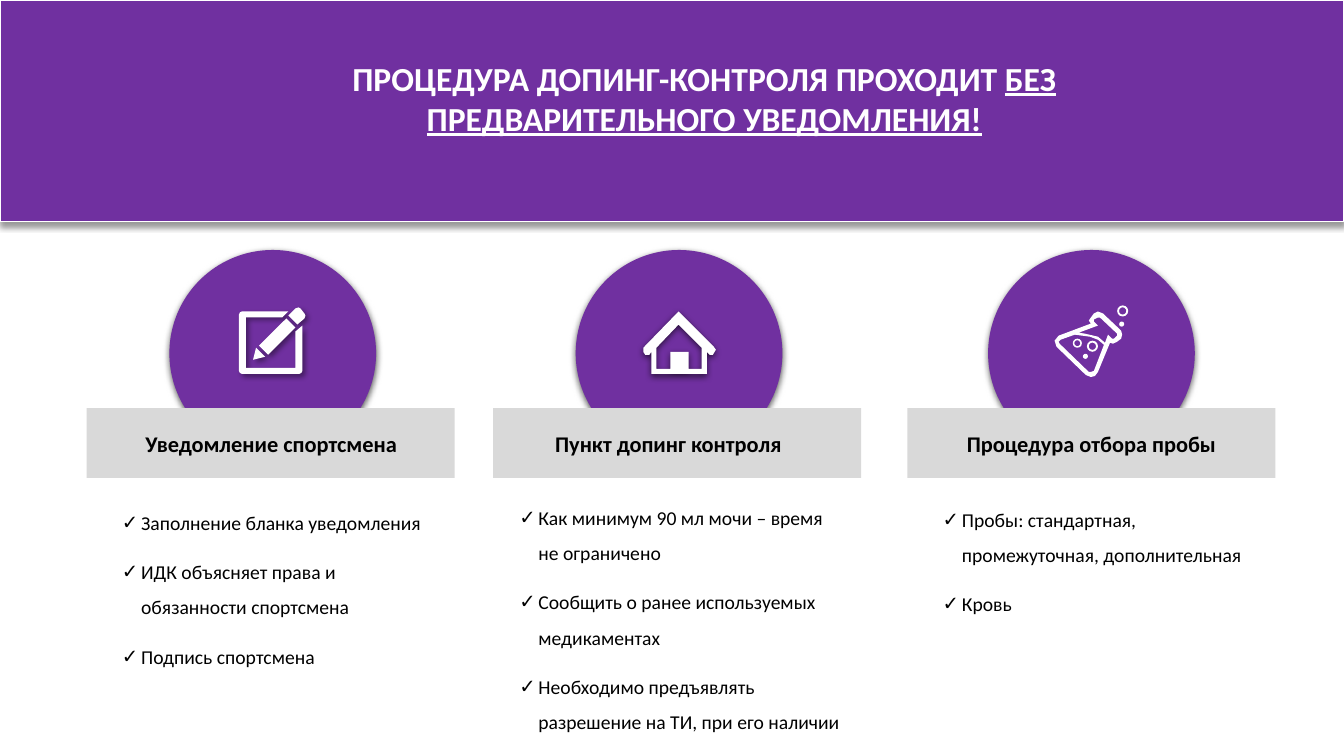
from lxml.etree import SubElement
from pptx import Presentation
from pptx.dml.color import RGBColor
from pptx.enum.shapes import MSO_SHAPE
from pptx.enum.text import MSO_ANCHOR, MSO_AUTO_SIZE, PP_ALIGN
from pptx.oxml.ns import qn
from pptx.util import Inches, Pt

PURPLE = RGBColor(0x70, 0x30, 0xA0)
GRAY = RGBColor(0xD9, 0xD9, 0xD9)
WHITE = RGBColor(0xFF, 0xFF, 0xFF)
BLACK = RGBColor(0, 0, 0)

TITLE = [("ПРОЦЕДУРА ДОПИНГ-КОНТРОЛЯ ПРОХОДИТ ", False),
         ("БЕЗ ПРЕДВАРИТЕЛЬНОГО УВЕДОМЛЕНИЯ!", True)]
COLUMNS = [
    {"circle": 1.68, "bar": 0.86, "heading": "Уведомление спортсмена",
     "heading_box": (1.38, 4.22, 2.62, 0.33), "list_box": (1.16, 4.9, 3.09, 1.65),
     "items": ["Заполнение бланка уведомления",
               "ИДК объясняет права и обязанности спортсмена",
               "Подпись спортсмена"]},
    {"circle": 5.71, "bar": 4.89, "heading": "Пункт допинг контроля",
     "heading_box": (5.45, 4.22, 2.36, 0.33), "list_box": (5.1, 4.85, 3.33, 2.35),
     "items": ["Как минимум 90 мл мочи – время не ограничено",
               "Сообщить о ранее используемых медикаментах",
               "Необходимо предъявлять разрешение на ТИ, при его наличии"]},
    {"circle": 9.8, "bar": 9, "heading": "Процедура отбора пробы",
     "heading_box": (9.53, 4.22, 2.59, 0.33), "list_box": (9.3, 4.87, 3.09, 1.15),
     "items": ["Пробы: стандартная, промежуточная, дополнительная", "Кровь"]},
]

SOFT_SHADOW = (63, 5, 1.5, 90)
BANNER_SHADOW = (40, 4, 3, 90)
PENCIL_SHADOW = (40, 4, 3, 45)

HOUSE = [
    [(708, 344), (673, 309), (639, 344), (638, 345), (638, 349), (640, 352), (644, 352),
     (646, 349), (646, 371), (701, 371), (701, 349), (704, 352), (707, 352), (710, 347)],
    [(696, 366), (683, 366), (683, 349), (665, 349), (665, 366), (651, 366), (651, 345),
     (673, 322), (696, 345)],
]
FLASK = [
    [(1094, 311), (1089, 309), (1085, 311), (1082, 315), (1080, 318), (1082, 321),
     (1050, 333), (1046, 338), (1048, 344), (1077, 372), (1082, 374), (1086, 373),
     (1089, 369), (1101, 340), (1104, 341), (1108, 339), (1112, 336), (1113, 332),
     (1112, 328)],
    [(1085, 368), (1082, 369), (1080, 369), (1051, 341), (1050, 339), (1052, 337),
     (1066, 332), (1081, 334), (1089, 337), (1095, 342)],
    [(1108, 333), (1105, 336), (1103, 336), (1099, 332), (1096, 340), (1089, 334),
     (1076, 331), (1070, 330), (1089, 323), (1085, 319), (1085, 317), (1089, 315),
     (1091, 315), (1108, 331)],
]
PENCIL = [
    [(302, 316), (295, 322), (286, 313), (293, 306), (296, 305), (298, 306), (302, 311),
     (303, 313)],
    [(254, 345), (263, 354), (251, 357)],
    [(293, 325), (266, 352), (257, 343), (284, 316)],
    [(244, 315), (244, 365), (293, 365), (293, 329), (300, 323), (300, 368), (299, 370),
     (297, 371), (240, 371), (238, 370), (237, 368), (237, 312), (238, 310), (240, 309),
     (286, 309), (280, 315)],
]
ICONS = [(HOUSE, SOFT_SHADOW), (FLASK, None), (PENCIL, PENCIL_SHADOW)]
RINGS = [(10.78, 3.38, 0.11), (11.08, 3.03, 0.11), (10.64, 3.36, 0.09)]
DOTS = [(10.74, 3.51, 0.05), (11.1, 3.19, 0.05)]


def paint(sp, fill, shadow=None):
    sp.fill.solid()
    sp.fill.fore_color.rgb = fill
    sp.line.fill.background()
    sp.shadow.inherit = False
    if shadow:
        alpha, blur, dist, angle = shadow
        effects = sp._element.spPr.find(qn("a:effectLst"))
        outer = SubElement(effects, qn("a:outerShdw"), blurRad=str(Pt(blur)),
                           dist=str(Pt(dist)), dir=str(angle * 60000),
                           algn="ctr", rotWithShape="0")
        color = SubElement(outer, qn("a:srgbClr"), val="000000")
        SubElement(color, qn("a:alpha"), val=str(alpha * 1000))


def add_shape(s, kind, box, fill, shadow=None):
    sp = s.shapes.add_shape(kind, *map(Inches, box))
    paint(sp, fill, shadow)
    return sp


def add_icon(s, contours, shadow):
    first, *rest = contours
    builder = s.shapes.build_freeform(*first[0], scale=Inches(0.01))
    builder.add_line_segments(first[1:], close=True)
    for contour in rest:
        builder.move_to(*contour[0])
        builder.add_line_segments(contour[1:], close=True)
    paint(builder.convert_to_shape(), WHITE, shadow)


def set_frame(sp, box, wrap=True):
    sp.left, sp.top, sp.width, sp.height = map(Inches, box)
    tf = sp.text_frame
    frame = {"word_wrap": wrap, "auto_size": MSO_AUTO_SIZE.SHAPE_TO_FIT_TEXT,
             "vertical_anchor": MSO_ANCHOR.TOP}
    frame.update({f"margin_{side}": Inches(0.05)
                  for side in ("left", "right", "top", "bottom")})
    for name, value in frame.items():
        setattr(tf, name, value)
    return tf


def add_run(p, text, size, color, bold=False, underline=False):
    r = p.add_run()
    r.text = text
    font = {"name": "Calibri", "size": Pt(size), "bold": bold, "underline": underline}
    for name, value in font.items():
        setattr(r.font, name, value)
    r.font.color.rgb = color


def fill_list(tf, items):
    for i, item in enumerate(items):
        p = tf.add_paragraph() if i else tf.paragraphs[0]
        layout = {"alignment": PP_ALIGN.LEFT, "line_spacing": 1.5,
                  "space_before": Pt(10), "space_after": Pt(0)}
        for name, value in layout.items():
            setattr(p, name, value)
        pPr = p._p.get_or_add_pPr()
        pPr.set("marL", str(Inches(0.19)))
        pPr.set("indent", str(-Inches(0.19)))
        SubElement(pPr, qn("a:buFont"), typeface="Arial")
        SubElement(pPr, qn("a:buChar"), char="✓")
        add_run(p, item, 14, BLACK)


def main():
    prs = Presentation()
    prs.slide_width, prs.slide_height = Inches(13.33), Inches(7.5)
    s = prs.slides.add_slide(prs.slide_layouts.get_by_name("Comparison"))
    title, *bodies = s.placeholders

    for column, body in zip(COLUMNS, bodies):
        add_shape(s, MSO_SHAPE.OVAL, (column["circle"], 2.48, 2.05, 2.05), PURPLE, SOFT_SHADOW)
        add_shape(s, MSO_SHAPE.RECTANGLE, (column["bar"], 4.05, 3.65, 0.69), GRAY)
        heading = s.shapes.add_textbox(0, 0, 0, 0)
        p = set_frame(heading, column["heading_box"], wrap=False).paragraphs[0]
        p.alignment = PP_ALIGN.CENTER
        add_run(p, column["heading"], 16, BLACK, bold=True)
        fill_list(set_frame(body, column["list_box"]), column["items"])
    for body in bodies[len(COLUMNS):]:
        body._element.getparent().remove(body._element)

    banner = add_shape(s, MSO_SHAPE.RECTANGLE, (0, 0, 13.33, 2.2), PURPLE, BANNER_SHADOW)
    banner.line.color.rgb = WHITE
    banner.line.width = Pt(1)
    banner._element.addnext(title._element)
    p = set_frame(title, (2.23, 0.52, 9.51, 0.91)).paragraphs[0]
    p.alignment = PP_ALIGN.CENTER
    for text, underline in TITLE:
        add_run(p, text, 24, WHITE, bold=True, underline=underline)

    for contours, shadow in ICONS:
        add_icon(s, contours, shadow)
    for left, top, size in RINGS:
        ring = add_shape(s, MSO_SHAPE.DONUT, (left, top, size, size), WHITE)
        ring.adjustments[0] = 0.17
    for left, top, size in DOTS:
        add_shape(s, MSO_SHAPE.OVAL, (left, top, size, size), WHITE)

    prs.save("out.pptx")


if __name__ == "__main__":
    main()
